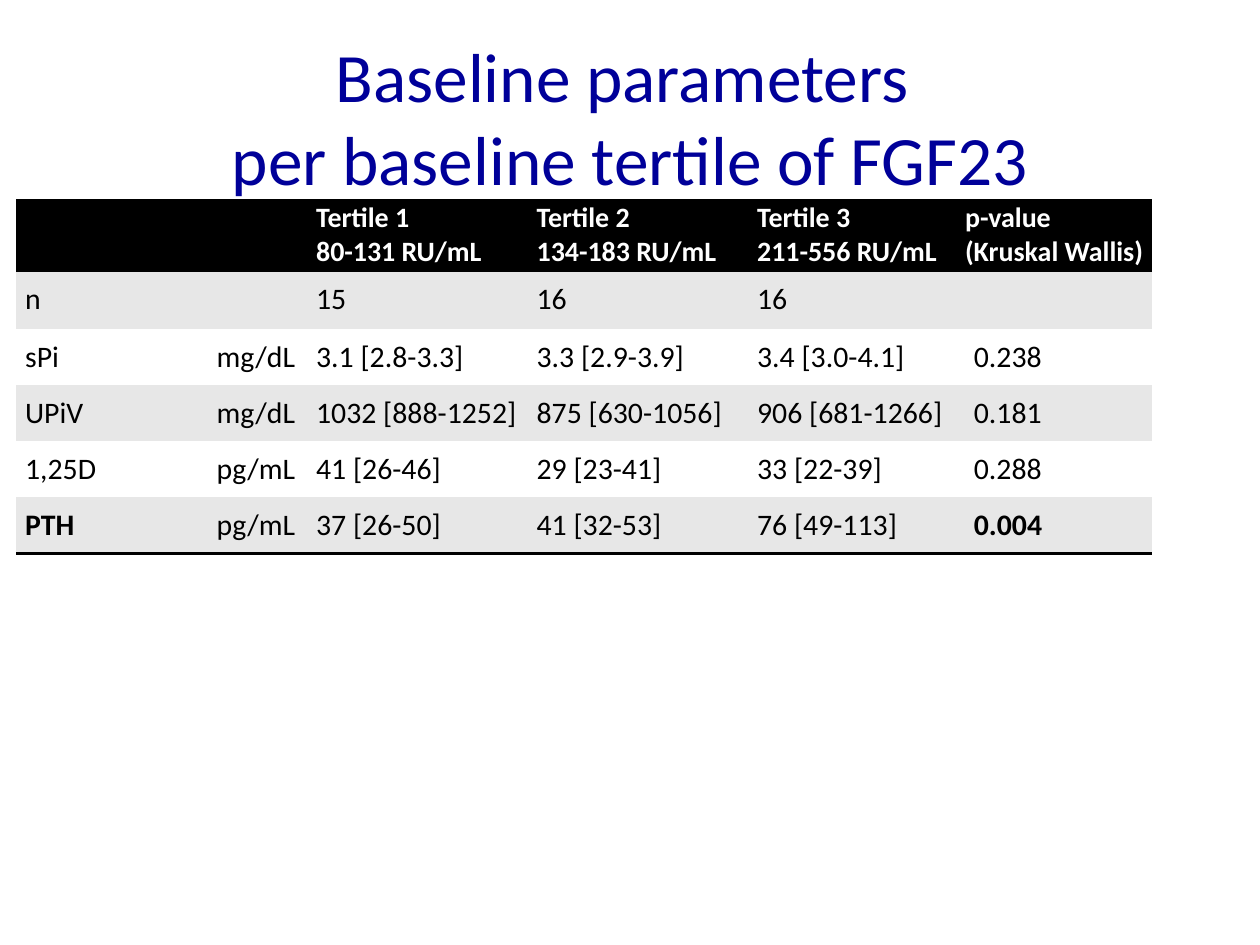
from lxml import etree
from pptx import Presentation
from pptx.dml.color import RGBColor
from pptx.enum.text import MSO_ANCHOR, PP_ALIGN
from pptx.oxml.ns import qn
from pptx.util import Inches, Pt

NAVY = RGBColor(0x00, 0x00, 0x99)
BLACK = RGBColor(0x00, 0x00, 0x00)
WHITE = RGBColor(0xFF, 0xFF, 0xFF)
GREY = RGBColor(0xE7, 0xE7, 0xE7)
PLAIN_TABLE = "{2D5ABB26-0587-4C30-8999-92F81FD0307C}"

COLUMN_WIDTHS = [15.2, 7.9, 17.5, 17.5, 17.2, 14.8]
HEADER_HEIGHT, ROW_HEIGHT = 7.47, 5.94
HEADER = [
    "",
    "",
    "Tertile 1\n80-131 RU/mL",
    "Tertile 2\n134-183 RU/mL",
    "Tertile 3\n211-556 RU/mL",
    "p-value\n(Kruskal Wallis)",
]
PARAMETERS = [
    ["n", "", "15", "16", "16", ""],
    ["sPi", "mg/dL", "3.1 [2.8-3.3]", "3.3 [2.9-3.9]", "3.4 [3.0-4.1]", "0.238"],
    ["UPiV", "mg/dL", "1032 [888-1252]", "875 [630-1056]", "906 [681-1266]", "0.181"],
    ["1,25D", "pg/mL", "41 [26-46]", "29 [23-41]", "33 [22-39]", "0.288"],
    ["PTH", "pg/mL", "37 [26-50]", "41 [32-53]", "76 [49-113]", "0.004"],
]
SIGNIFICANT = {"PTH", "0.004"}


class SlideBuilder:
    """Draws styled elements on one slide, with lengths in percent of its size."""

    font = "Calibri"

    def __init__(self, deck):
        self.deck = deck
        self.page = deck.slides.add_slide(deck.slide_layouts[6])

    def across(self, percent):
        return round(self.deck.slide_width * percent / 100)

    def down(self, percent):
        return round(self.deck.slide_height * percent / 100)

    def span(self, para, text, size, color, bold=False):
        span = para.add_run()
        span.text = text
        span.font.name = self.font
        span.font.size = Pt(size)
        span.font.bold = bold
        span.font.color.rgb = color

    def title(self, lines, left, top, width, height):
        box = self.page.shapes.add_textbox(
            self.across(left), self.down(top), self.across(width), self.down(height)
        )
        frame = box.text_frame
        frame.word_wrap = True
        frame.vertical_anchor = MSO_ANCHOR.MIDDLE
        para = frame.paragraphs[0]
        para.alignment = PP_ALIGN.CENTER
        for index, line in enumerate(lines):
            if index:
                para.add_line_break()
            self.span(para, line, 39.6, NAVY)

    def border(self, cell, side):
        properties = cell._tc.get_or_add_tcPr()
        line = etree.SubElement(properties, qn(f"a:{side}"), w=str(Pt(2)))
        fill = etree.SubElement(line, qn("a:solidFill"))
        etree.SubElement(fill, qn("a:srgbClr"), val=str(BLACK))

    def cell(self, cell, text, fill, size, color, margins, bold=False, borders=()):
        for side in borders:
            self.border(cell, side)
        cell.fill.solid()
        cell.fill.fore_color.rgb = fill
        (cell.margin_left, cell.margin_top, cell.margin_right, cell.margin_bottom) = map(
            Inches, margins
        )
        for index, line in enumerate(text.split("\n") if text else []):
            frame = cell.text_frame
            para = frame.add_paragraph() if index else frame.paragraphs[0]
            self.span(para, line, size, color, bold)

    def table(self, header, rows, left, top):
        height = HEADER_HEIGHT + ROW_HEIGHT * len(rows)
        table = self.page.shapes.add_table(
            len(rows) + 1, len(header), self.across(left), self.down(top),
            self.across(sum(COLUMN_WIDTHS)), self.down(height),
        ).table
        table.horz_banding = False
        table._tbl.tblPr.find(qn("a:tableStyleId")).text = PLAIN_TABLE
        for column, width in zip(table.columns, COLUMN_WIDTHS):
            column.width = self.across(width)
        for index, row in enumerate(table.rows):
            row.height = self.down(ROW_HEIGHT if index else HEADER_HEIGHT)
        last = len(header) - 1
        for column, text in enumerate(header):
            side = 0 if column == last else 0.07
            self.cell(table.cell(0, column), text, BLACK, 16, WHITE,
                      (side, 0, side, 0), True, ("lnT", "lnB"))
        table.cell(0, 0).merge(table.cell(0, 1))
        for index, values in enumerate(rows, 1):
            for column, text in enumerate(values):
                right = 0 if column == last else 0.07
                self.cell(table.cell(index, column), text, GREY if index % 2 else WHITE,
                          17, BLACK, (0.07, 0.08, right, 0.08), text in SIGNIFICANT,
                          ("lnB",) if index == len(rows) else ())


def main():
    deck = Presentation()
    deck.slide_width, deck.slide_height = Inches(10), Inches(7.5)
    builder = SlideBuilder(deck)
    builder.title(["Baseline parameters ", "per baseline tertile of FGF23"], 5, 4, 90, 16.67)
    builder.table(HEADER, PARAMETERS, 1.3, 21.2)
    deck.save("out.pptx")


if __name__ == "__main__":
    main()
